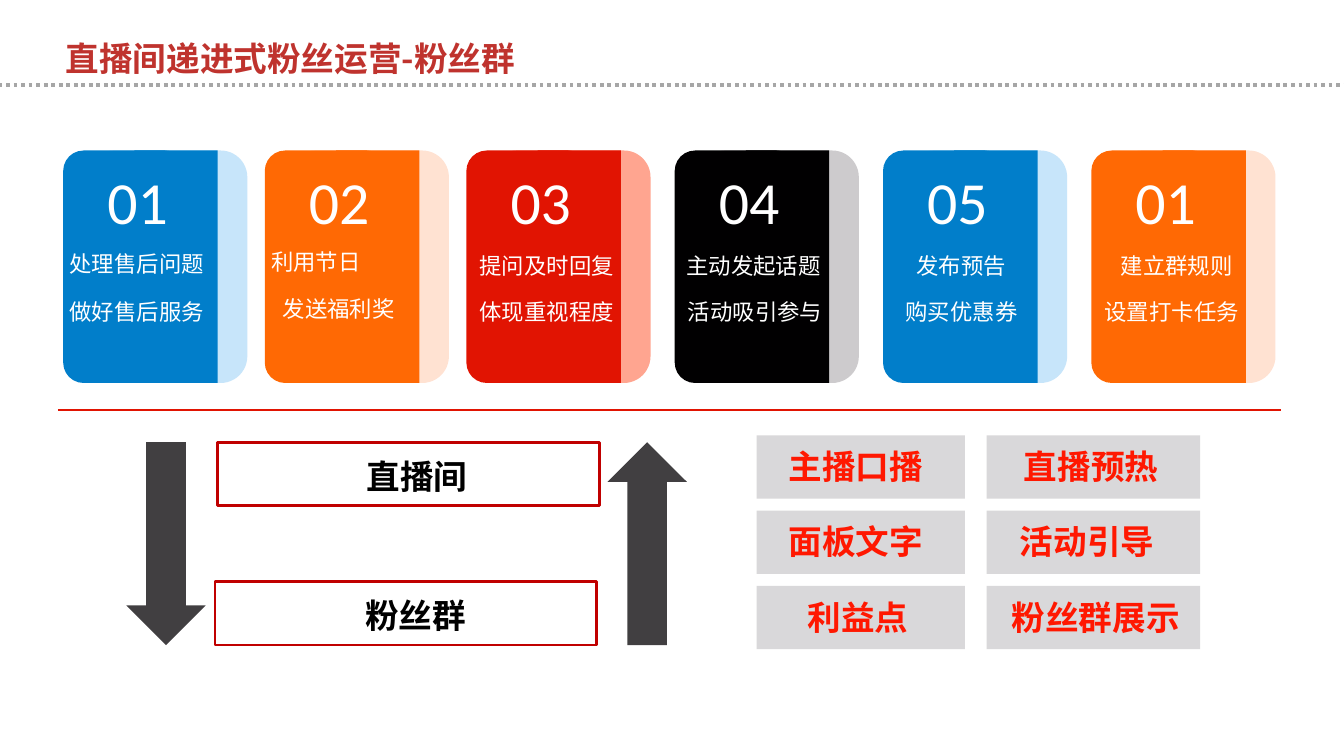
from lxml import etree
from pptx import Presentation
from pptx import util as u
from pptx.dml.color import RGBColor
from pptx.enum import dml, shapes, text
from pptx.oxml.ns import qn

BLUE, PALE_BLUE = RGBColor(0x01, 0x7E, 0xCA), RGBColor(0xC7, 0xE5, 0xFA)
ORANGE, PEACH = RGBColor(0xFF, 0x69, 0x04), RGBColor(0xFF, 0xE2, 0xD2)
RED, PINK = RGBColor(0xE1, 0x14, 0x02), RGBColor(0xFF, 0xA5, 0x90)
BLACK, SILVER = RGBColor(0x01, 0x00, 0x01), RGBColor(0xCD, 0xCB, 0xCD)
WHITE, INK = RGBColor(255, 255, 255), RGBColor(0, 0, 0)
BRICK, CRIMSON = RGBColor(0xBF, 0x33, 0x2E), RGBColor(0xC0, 0, 0)
SCARLET, TILE = RGBColor(0xFF, 0x18, 0x01), RGBColor(0xD9, 0xD8, 0xDA)
DARK, DOTS = RGBColor(0x41, 0x3F, 0x41), RGBColor(0xA6, 0xA6, 0xA6)

HAN, LATIN = "Noto Sans CJK SC", "Calibri"
TITLE = "直播间递进式粉丝运营-粉丝群"

# left, number, main colour, pale colour, labels as (text, left, top, width)
CARDS = [
    (0.47, "01", BLUE, PALE_BLUE,
     [("处理售后问题", 0.42, 1.81, 1.2), ("做好售后服务", 0.42, 2.17, 1.2)]),
    (1.97, "02", ORANGE, PEACH,
     [("利用节日\n发送福利奖", 1.92, 1.82, 1.2)]),
    (3.47, "03", RED, PINK,
     [("提问及时回复", 3.47, 1.83, 1.26), ("体现重视程度", 3.47, 2.17, 1.23)]),
    (5.02, "04", BLACK, SILVER,
     [("主动发起话题", 5.01, 1.83, 1.2), ("活动吸引参与", 5.02, 2.17, 1.2)]),
    (6.57, "05", BLUE, PALE_BLUE,
     [("发布预告", 6.72, 1.83, 0.87), ("购买优惠券", 6.64, 2.17, 1.03)]),
    (8.12, "01", ORANGE, PEACH,
     [("建立群规则", 8.24, 1.83, 1.03), ("设置打卡任务", 8.12, 2.17, 1.2)]),
]
CARD_TOP, CARD_H = 1.12, 1.73
# preset, offset from card left, width, pale or not
LAYERS = [("ROUNDED_RECTANGLE", 0.18, 1.19, True),
          ("ROUNDED_RECTANGLE", 0, 0.91, False),
          ("RECTANGLE", 0.53, 0.62, False)]

# text, box left, box top, text left, text width
STAGES = [("直播间", 1.62, 3.29, 2.63, 0.96), ("粉丝群", 1.6, 4.33, 2.62, 0.97)]
ARROWS = [("DOWN_ARROW", 0.94), ("UP_ARROW", 4.52)]

# tile left, tile width, labels as (text, left, width)
COLUMNS = [
    (5.63, 1.55, [("主播口播", 5.77, 1.28), ("面板文字", 5.77, 1.28),
                  ("利益点", 5.91, 1)]),
    (7.34, 1.59, [("直播预热", 7.52, 1.28), ("活动引导", 7.49, 1.28),
                  ("粉丝群展示", 7.43, 1.47)]),
]
TILE_TOP, TILE_STEP, TILE_H = 3.24, 0.56, 0.47


def add_form(home, kind, x, y, w, h, fill, edge=None):
    form = home.add_shape(getattr(shapes.MSO_SHAPE, kind),
                          *map(u.Inches, (x, y, w, h)))
    form.shadow.inherit = False
    form.fill.solid()
    form.fill.fore_color.rgb = fill
    if edge is None:
        form.line.fill.background()
    else:
        form.line.color.rgb = edge
        form.line.width = u.Pt(1.5)


def add_label(home, words, x, y, w, h, size, color, bold=False, font=HAN):
    """Add a text box; lines after the first are centred and set apart."""
    frame = home.add_textbox(*map(u.Inches, (x, y, w, h))).text_frame
    lines = words.split("\n")
    frame.word_wrap = len(lines) > 1
    for row, line in enumerate(lines):
        para = frame.add_paragraph() if row else frame.paragraphs[0]
        para.alignment = text.PP_ALIGN.CENTER if row else text.PP_ALIGN.LEFT
        if len(lines) > 1:
            para.line_spacing = 0.9
            para.space_before = u.Pt(12 if row else 0)
        run = para.add_run()
        run.text = line
        run.font.size = u.Pt(size)
        run.font.bold = bold
        run.font.color.rgb = color
        run.font.name = font
        east = etree.SubElement(run.font._element, qn("a:ea"))
        east.set("typeface", font)


def add_rule(home, start, end, y, color, width, dash):
    rule = home.add_connector(shapes.MSO_CONNECTOR.STRAIGHT,
                              *map(u.Inches, (start, y, end, y)))
    rule.line.color.rgb = color
    rule.line.width = u.Pt(width)
    rule.line.dash_style = dash
    etree.SubElement(rule._element.spPr, qn("a:effectLst"))
    rule._element.remove(rule._element.find(qn("p:style")))


def add_card(home, x, number, main, pale, labels):
    group = home.add_group_shape().shapes
    for kind, shift, width, light in LAYERS:
        add_form(group, kind, x + shift, CARD_TOP, width, CARD_H,
                 pale if light else main)
    add_label(home, number, x + 0.23, 1.18, 0.65, 0.64, 32, WHITE, font=LATIN)
    for words, left, top, width in labels:
        high = 0.64 if "\n" in words else 0.3
        add_label(home, words, left, top, width, high, 12, WHITE)


def main():
    deck = Presentation()
    deck.slide_width = u.Inches(10)
    deck.slide_height = deck.slide_width * 9 // 16
    home = deck.slides.add_slide(deck.slide_layouts[6]).shapes

    add_label(home, TITLE, 0.39, 0.23, 4.23, 0.4, 18, BRICK, bold=True)
    add_rule(home, -0.01, 10.01, 0.63, DOTS, 2, dml.MSO_LINE.ROUND_DOT)
    for card in CARDS:
        add_card(home, *card)
    add_rule(home, 0.43, 9.53, 3.05, RED, 1, dml.MSO_LINE.SOLID)

    for kind, x in ARROWS:
        add_form(home, kind, x, 3.29, 0.59, 1.51, DARK)
    for words, x, y, left, width in STAGES:
        add_form(home, "RECTANGLE", x, y, 2.84, 0.47, WHITE, CRIMSON)
        add_label(home, words, left, y + 0.05, width, 0.4, 18, INK, bold=True)

    for x, wide, labels in COLUMNS:
        for row, (words, left, width) in enumerate(labels):
            y = TILE_TOP + row * TILE_STEP
            add_form(home, "RECTANGLE", x, y, wide, TILE_H, TILE)
            add_label(home, words, left, y + 0.03, width, 0.4, 18, SCARLET,
                      bold=True)

    deck.save("out.pptx")


if __name__ == "__main__":
    main()
